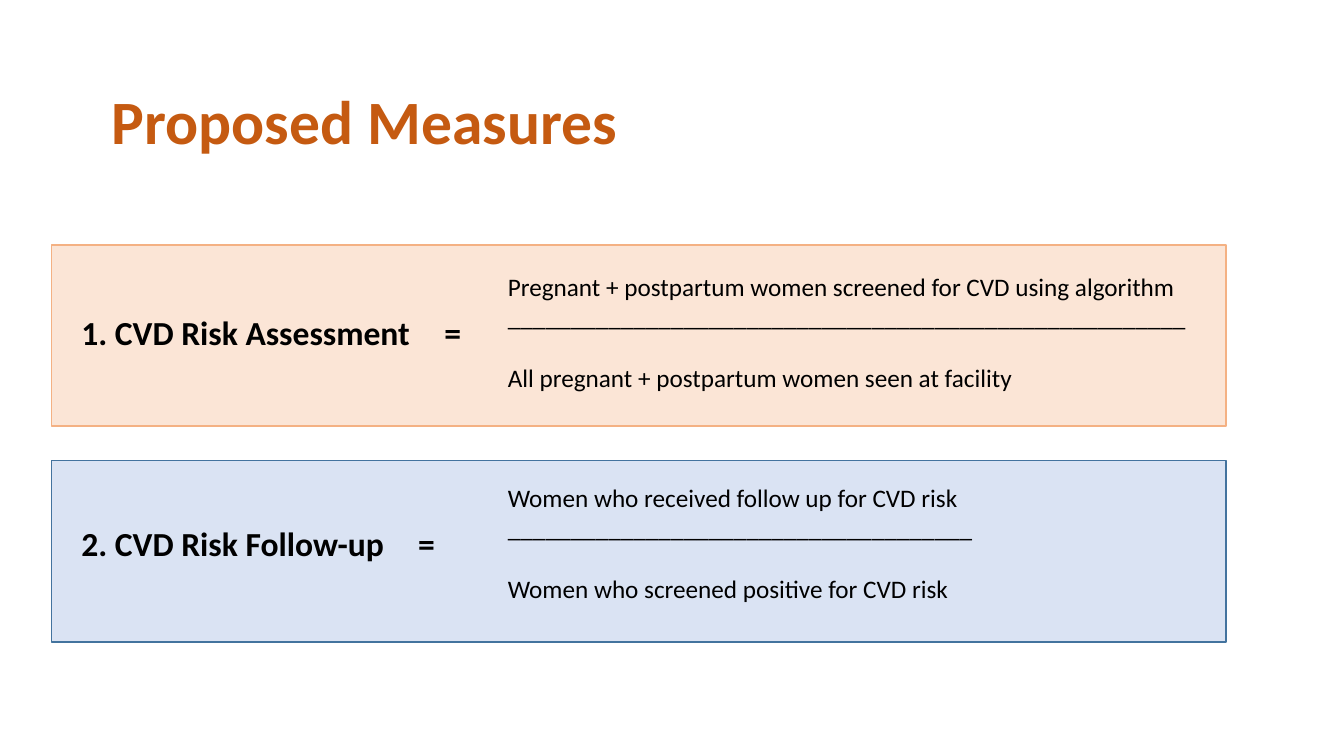
from lxml import etree
from pptx import Presentation
from pptx import util as u
from pptx.dml.color import RGBColor
from pptx.enum import shapes, text
from pptx.oxml.ns import qn

COLORS = {
    "title": "C55A11",
    "text": "000000",
    "peach": "FBE5D6",
    "orange": "F4B183",
    "pale_blue": "DAE3F3",
    "blue": "43739E",
}


class MeasureSlide:
    font_name = "Calibri"

    def __init__(self, deck):
        self.slide = deck.slides.add_slide(deck.slide_layouts[6])

    def color(self, name):
        return RGBColor.from_string(COLORS[name])

    def panel(self, left, top, width, height, fill, line):
        panel = self.slide.shapes.add_shape(
            shapes.MSO_SHAPE.RECTANGLE,
            u.Cm(left), u.Cm(top), u.Cm(width), u.Cm(height))
        panel.shadow.inherit = False
        panel.fill.solid()
        panel.fill.fore_color.rgb = self.color(fill)
        panel.line.color.rgb = self.color(line)
        panel.line.width = u.Pt(1)

    def text(self, left, top, width, height, lines, size, bold=False,
             color="text", anchor=text.MSO_ANCHOR.TOP):
        """Add a text box with one paragraph per line; return the paragraphs."""
        box = self.slide.shapes.add_textbox(
            u.Cm(left), u.Cm(top), u.Cm(width), u.Cm(height))
        frame = box.text_frame
        frame.word_wrap = True
        frame.vertical_anchor = anchor
        frame.text = "\n".join(lines)
        for paragraph in frame.paragraphs:
            paragraph.font.name = self.font_name
            paragraph.font.size = u.Pt(size)
            paragraph.font.bold = bold
            paragraph.font.color.rgb = self.color(color)
        return frame.paragraphs

    def title(self, wording):
        heading, = self.text(2.57, 1.3, 28.75, 3.68, [wording], 44, True,
                             "title", text.MSO_ANCHOR.MIDDLE)
        heading.line_spacing = 0.9

    def label(self, top, name, equals_at):
        """Add a measure's name, with its equals sign at a tab stop."""
        label, = self.text(1.8, top, 10.5, 1.27, [f"{name}\t="], 24, True)
        properties = label._p.get_or_add_pPr()
        stops = etree.Element(qn("a:tabLst"))
        etree.SubElement(stops, qn("a:tab"), pos=str(u.Cm(equals_at)), algn="l")
        properties.insert_element_before(stops, "a:defRPr", "a:extLst")

    def ratio(self, top, numerator, bar_length, denominator):
        lines = [numerator, "_" * bar_length, denominator]
        below_bar = self.text(12.55, top, 18.2, 3.33, lines, 18)[-1]
        below_bar.space_before = u.Pt(22)


def main():
    deck = Presentation()
    deck.slide_width, deck.slide_height = u.Cm(33.87), u.Cm(19.05)
    page = MeasureSlide(deck)
    page.title("Proposed Measures")

    measures = [
        (6.17, 6.71, "peach", "orange", "1. CVD Risk Assessment", 9.15,
         "Pregnant + postpartum women screened for CVD using algorithm", 54,
         "All pregnant + postpartum women seen at facility"),
        (11.61, 12.02, "pale_blue", "blue", "2. CVD Risk Follow-up", 8.49,
         "Women who received follow up for CVD risk", 37,
         "Women who screened positive for CVD risk"),
    ]
    for (panel_top, ratio_top, fill, line, name, equals_at,
         numerator, bar_length, denominator) in measures:
        page.panel(1.3, panel_top, 29.6, 4.57, fill, line)
        page.label(ratio_top + 1.02, name, equals_at)
        page.ratio(ratio_top, numerator, bar_length, denominator)

    deck.save("out.pptx")


if __name__ == "__main__":
    main()
